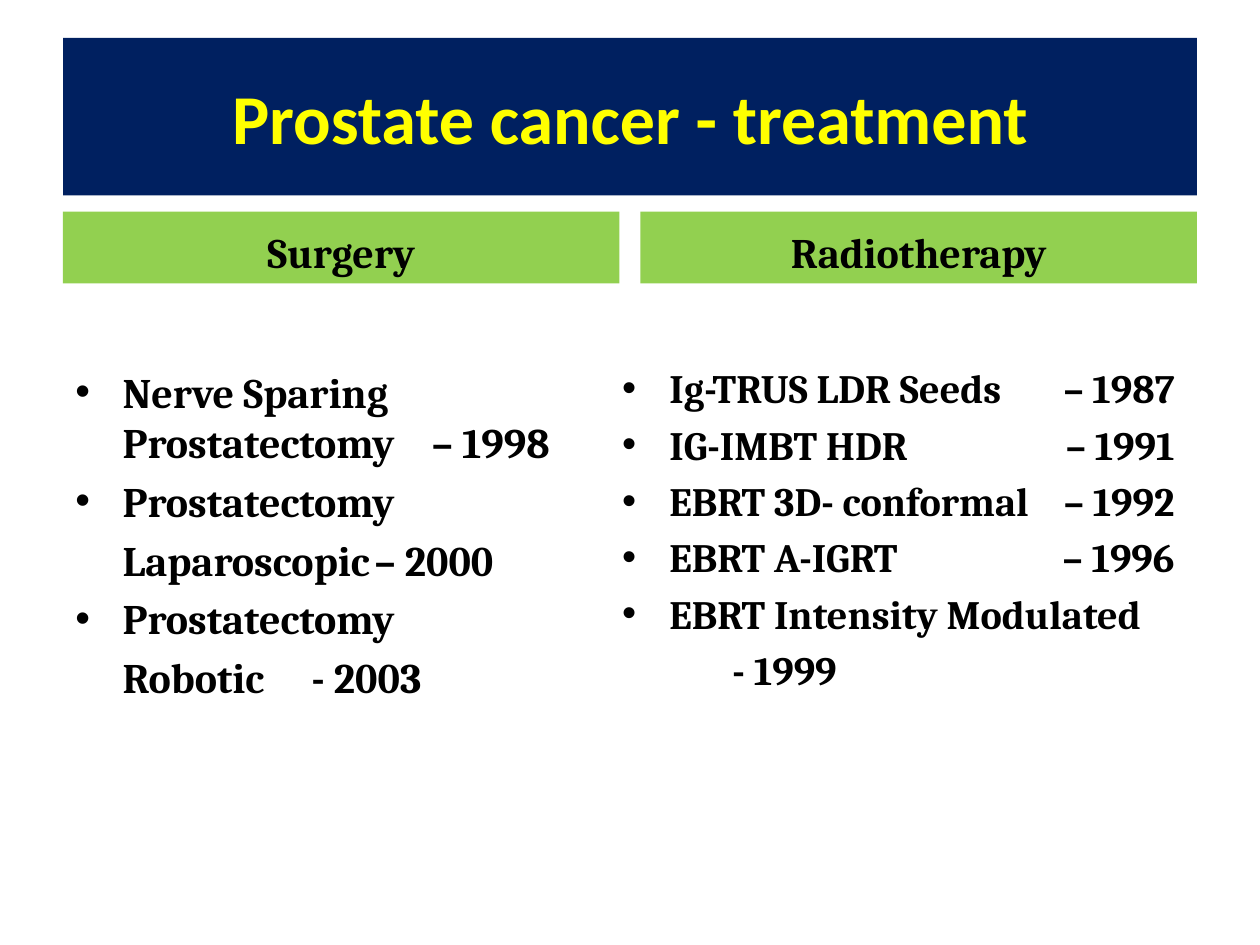
import pptx
import pptx.dml.color
import pptx.enum.shapes
import pptx.enum.text
import pptx.util
from lxml import etree

Pt = pptx.util.Pt
ALIGN = pptx.enum.text.PP_ALIGN
ANCHOR = pptx.enum.text.MSO_ANCHOR
NAMESPACE = "http://schemas.openxmlformats.org/drawingml/2006/main"

TITLE = "Prostate cancer - treatment"
# Each line: (has bullet, text); a tab leads to the year.
COLUMNS = [
    {
        "heading": "Surgery", "heading_left": 36, "list_left": 36, "list_width": 318,
        "size": 24, "year_tab": 271,
        "lines": [
            (True, "Nerve Sparing Prostatectomy\t– 1998"),
            (True, "Prostatectomy"),
            (False, "Laparoscopic\t– 2000"),
            (True, "Prostatectomy"),
            (False, "Robotic\t- 2003"),
        ],
    },
    {
        "heading": "Radiotherapy", "heading_left": 366, "list_left": 348.5, "list_width": 357,
        "size": 23, "year_tab": 325,
        "lines": [
            (True, "Ig-TRUS LDR Seeds\t– 1987"),
            (True, "IG-IMBT HDR\t– 1991"),
            (True, "EBRT 3D- conformal\t– 1992"),
            (True, "EBRT A-IGRT\t– 1996"),
            (True, "EBRT Intensity Modulated"),
            (False, "\t- 1999"),
        ],
    },
]
HEADING_TOP, HEADING_WIDTH, HEADING_HEIGHT = 121, 318, 41
LIST_TOP, LIST_HEIGHT = 171.5, 311
INDENT = 27


def rgb(value):
    return pptx.dml.color.RGBColor.from_string(value)


def place(shape, left, top, width, height):
    shape.left, shape.top, shape.width, shape.height = map(Pt, (left, top, width, height))


def fill(shape, color):
    shape.fill.solid()
    shape.fill.fore_color.rgb = rgb(color)


def style(paragraph, size, font="Cambria", color="000000"):
    for run in paragraph.runs:
        run.font.name, run.font.size, run.font.bold = font, Pt(size), True
        run.font.color.rgb = rgb(color)


def set_list_format(paragraph, bulleted, tab):
    """Indent the paragraph, with a bullet if wanted and a right tab for the year."""
    properties = paragraph._p.get_or_add_pPr()
    properties.set("marL", str(Pt(INDENT)))
    properties.set("indent", str(Pt(-INDENT if bulleted else 0)))
    if bulleted:
        etree.SubElement(properties, f"{{{NAMESPACE}}}buFont", typeface="Arial")
        etree.SubElement(properties, f"{{{NAMESPACE}}}buChar", char="•")
    else:
        etree.SubElement(properties, f"{{{NAMESPACE}}}buNone")
    tabs = etree.SubElement(properties, f"{{{NAMESPACE}}}tabLst")
    etree.SubElement(tabs, f"{{{NAMESPACE}}}tab", pos=str(Pt(tab)), algn="r")


def add_heading(slide, column):
    heading = slide.shapes.add_shape(pptx.enum.shapes.MSO_SHAPE.RECTANGLE, 0, 0, 0, 0)
    place(heading, column["heading_left"], HEADING_TOP, HEADING_WIDTH, HEADING_HEIGHT)
    heading.shadow.inherit = False
    fill(heading, "92D050")
    heading.line.fill.background()
    frame = heading.text_frame
    frame.text = column["heading"]
    frame.vertical_anchor = ANCHOR.BOTTOM
    frame.paragraphs[0].alignment = ALIGN.CENTER
    style(frame.paragraphs[0], 24)


def add_list(slide, column):
    box = slide.shapes.add_textbox(0, 0, 0, 0)
    place(box, column["list_left"], LIST_TOP, column["list_width"], LIST_HEIGHT)
    frame = box.text_frame
    frame.word_wrap = True
    size = column["size"]
    frame.margin_top = Pt(3.6 + 1.42 * size)
    for index, (bulleted, text) in enumerate(column["lines"]):
        paragraph = frame.add_paragraph() if index else frame.paragraphs[0]
        paragraph.text = text
        if index:
            paragraph.space_before = Pt(0.2 * size)
        set_list_format(paragraph, bulleted, column["year_tab"])
        style(paragraph, size)


def main():
    presentation = pptx.Presentation()
    presentation.slide_width, presentation.slide_height = Pt(720), Pt(540)
    slide = presentation.slides.add_slide(presentation.slide_layouts[5])

    title = slide.shapes.title
    place(title, 36, 21.6, 648, 90)
    fill(title, "002060")
    title.text_frame.text = TITLE
    title.text_frame.vertical_anchor = ANCHOR.MIDDLE
    title.text_frame.paragraphs[0].alignment = ALIGN.CENTER
    style(title.text_frame.paragraphs[0], 40, "Calibri", "FFFF00")

    for column in COLUMNS:
        add_heading(slide, column)
        add_list(slide, column)
    presentation.save("out.pptx")


if __name__ == "__main__":
    main()
